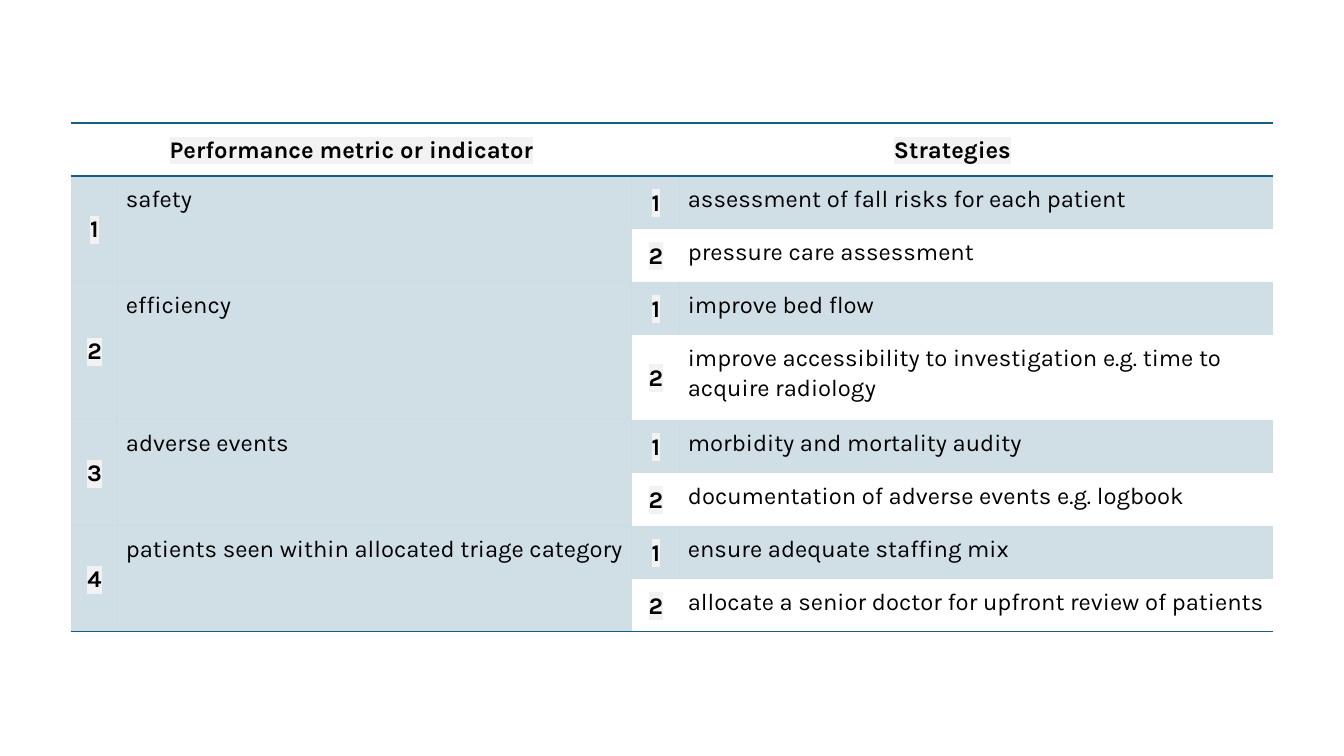
"""Build a slide with a table of performance metrics and the strategies for each."""
from lxml.etree import SubElement
from pptx import Presentation
from pptx.dml.color import RGBColor
from pptx.enum.text import MSO_ANCHOR, PP_ALIGN
from pptx.oxml import parse_xml
from pptx.oxml.ns import qn
from pptx.util import Pt

PX = 914400 / 100.8
BLUE, BLACK, GREY = "156082", "000000", "F2F2F2"
NO_STYLE = "{2D5ABB26-0587-4C30-8999-92F81FD0307C}"
NAMESPACE = "http://schemas.openxmlformats.org/drawingml/2006/main"

METRICS = [
    ("safety", ["assessment of fall risks for each patient", "pressure care assessment"]),
    ("efficiency", ["improve bed flow",
                    "improve accessibility to investigation e.g. time to acquire radiology"]),
    ("adverse events", ["morbidity and mortality audity",
                        "documentation of adverse events e.g. logbook"]),
    ("patients seen within allocated triage category",
     ["ensure adequate staffing mix",
      "allocate a senior doctor for upfront review of patients"]),
]
COLUMN_WIDTHS = [47, 514, 48, 593]
ROW_HEIGHTS = [53, 53, 53, 53, 85, 53, 53, 53, 53]


def color(value):
    return RGBColor.from_string(value)


def write_cell(cell, text, label=False, shaded=False):
    cell.margin_left = cell.margin_right = round(8 * PX)
    cell.margin_top = cell.margin_bottom = round(8 * PX)
    cell.vertical_anchor = MSO_ANCHOR.MIDDLE if label else MSO_ANCHOR.TOP
    paragraph = cell.text_frame.paragraphs[0]
    paragraph.alignment = PP_ALIGN.CENTER if label else PP_ALIGN.LEFT
    paragraph.line_spacing = 1.07
    paragraph.space_after = Pt(8)
    run = paragraph.add_run()
    run.text = text
    run.font.size = Pt(17)
    run.font.bold = label
    run.font.name = "Karla"
    run.font.color.rgb = color(BLACK)
    if label:
        run.font._element.find(qn("a:solidFill")).addnext(parse_xml(
            f'<a:highlight xmlns:a="{NAMESPACE}"><a:srgbClr val="{GREY}"/></a:highlight>'))
    if shaded:
        cell.fill.solid()
        cell.fill.fore_color.rgb = color(BLUE)
        tint = cell._tc.tcPr.find(qn("a:solidFill")).find(qn("a:srgbClr"))
        SubElement(tint, qn("a:alpha"), val="20000")
    else:
        cell.fill.background()


presentation = Presentation()
presentation.slide_width = round(1344 * PX)
presentation.slide_height = round(756 * PX)
slide = presentation.slides.add_slide(presentation.slide_layouts[6])

frame = slide.shapes.add_table(
    len(ROW_HEIGHTS), len(COLUMN_WIDTHS), round(71 * PX), round(123 * PX),
    round(sum(COLUMN_WIDTHS) * PX), round(sum(ROW_HEIGHTS) * PX))
table = frame.table
table.first_row = table.horz_banding = False
table._tbl.tblPr.find(qn("a:tableStyleId")).text = NO_STYLE
for column, width in zip(table.columns, COLUMN_WIDTHS):
    column.width = round(width * PX)
for row, height in zip(table.rows, ROW_HEIGHTS):
    row.height = round(height * PX)

for column, heading in [(0, "Performance metric or indicator"), (2, "Strategies")]:
    table.cell(0, column).merge(table.cell(0, column + 1))
    write_cell(table.cell(0, column), heading, label=True)

for number, (metric, strategies) in enumerate(METRICS, 1):
    first = 2 * number - 1
    for column in (0, 1):
        table.cell(first, column).merge(table.cell(first + 1, column))
    write_cell(table.cell(first, 0), str(number), label=True, shaded=True)
    write_cell(table.cell(first, 1), metric, shaded=True)
    for offset, strategy in enumerate(strategies):
        shaded = offset == 0
        write_cell(table.cell(first + offset, 2), str(offset + 1), label=True, shaded=shaded)
        write_cell(table.cell(first + offset, 3), strategy, shaded=shaded)

last = len(ROW_HEIGHTS) - 1
ruled_cells = [(0, column, ["lnT", "lnB"]) for column in range(4)]
ruled_cells += [(last, column, ["lnB"]) for column in range(4)]
ruled_cells += [(last - 1, column, ["lnB"]) for column in (0, 1)]
for row, column, sides in ruled_cells:
    properties = table.cell(row, column)._tc.get_or_add_tcPr()
    for position, side in enumerate(sides):
        properties.insert(position, parse_xml(
            f'<a:{side} xmlns:a="{NAMESPACE}" w="12700"><a:solidFill>'
            f'<a:srgbClr val="{BLUE}"/></a:solidFill></a:{side}>'))

presentation.save("out.pptx")
